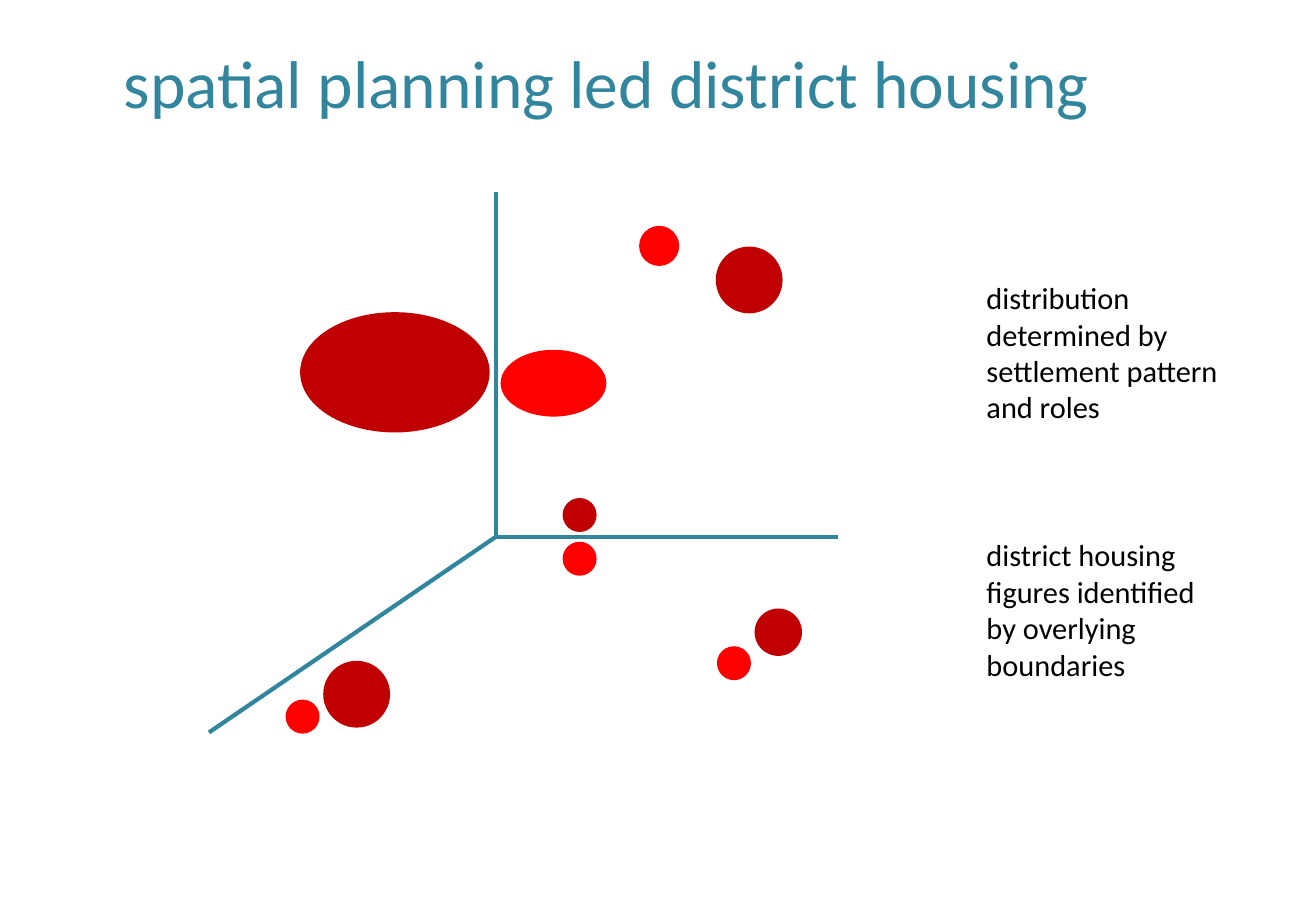
import pptx
import pptx.dml.color
import pptx.enum.shapes
import pptx.enum.text
import pptx.oxml.ns
import pptx.util
from lxml import etree

PX = 9144
FONT = "Calibri"
COLORS = {"teal": "31859C", "dark_red": "C00000", "red": "FF0000", "text": "000000"}
DARK_SETTLEMENTS = [
    (75, 99, 156, 99), (417, 45, 55, 55), (291, 252, 28, 28),
    (449, 343, 39, 39), (94, 386, 55, 55),
]
RED_SETTLEMENTS = [
    (240, 130, 87, 55), (354, 28, 33, 33), (291, 288, 28, 28),
    (418, 374, 28, 28), (63, 418, 28, 28),
]
BOUNDARY_ENDS = [(236, 0), (518, 284), (0, 445)]
BOUNDARY_MEETING = (236, 284)
NOTES = [
    "distribution determined by settlement pattern and roles",
    "district housing figures identified by overlying boundaries",
]


def px(length):
    """Turn px into EMU."""
    return pptx.util.Emu(length * PX)


def rgb(name):
    """Return a named colour."""
    return pptx.dml.color.RGBColor.from_string(COLORS[name])


def add_text(slide, box, lines, size, color, anchor, gap=0):
    """Write paragraphs in a box with a gap in points between them."""
    frame = slide.shapes.add_textbox(*map(px, box)).text_frame
    frame.word_wrap = True
    frame.vertical_anchor = anchor
    frame.text = "\n".join(lines)
    for index, paragraph in enumerate(frame.paragraphs):
        paragraph.space_before = pptx.util.Pt(gap if index else 0)
        for run in paragraph.runs:
            run.font.name = FONT
            run.font.size = pptx.util.Pt(size)
            run.font.color.rgb = rgb(color)


def add_settlements(slide, box, ellipses, color):
    """Draw one group of settlements on the map."""
    left, top = box[:2]
    settlements = slide.shapes.add_group_shape()
    for x, y, width, height in ellipses:
        settlement = settlements.shapes.add_shape(
            pptx.enum.shapes.MSO_SHAPE.OVAL,
            px(left + x), px(top + y), px(width), px(height))
        settlement.shadow.inherit = False
        settlement.fill.solid()
        settlement.fill.fore_color.rgb = rgb(color)
        settlement.line.fill.background()


def add_boundaries(slide, box):
    """Draw the district boundaries out from their meeting point."""
    left, top = box[:2]
    meeting_x, meeting_y = BOUNDARY_MEETING
    boundaries = slide.shapes.add_group_shape()
    for x, y in BOUNDARY_ENDS:
        boundary = boundaries.shapes.add_connector(
            pptx.enum.shapes.MSO_CONNECTOR.STRAIGHT,
            px(left + meeting_x), px(top + meeting_y), px(left + x), px(top + y))
        boundary.line.color.rgb = rgb("teal")
        boundary.line.width = pptx.util.Pt(2.5)
        etree.SubElement(boundary.element.spPr, pptx.oxml.ns.qn("a:effectLst"))


def add_map(slide, box):
    """Draw settlements overlaid by district boundaries."""
    add_settlements(slide, box, DARK_SETTLEMENTS, "dark_red")
    add_settlements(slide, box, RED_SETTLEMENTS, "red")
    add_boundaries(slide, box)


def main():
    """Build and save the slide."""
    deck = pptx.Presentation()
    deck.slide_width, deck.slide_height = px(1083), px(750)
    slide = deck.slides.add_slide(deck.slide_layouts[6])
    anchors = pptx.enum.text.MSO_ANCHOR
    add_text(slide, (92, 5, 900, 125), ["spatial planning led district housing"],
             40, "teal", anchors.MIDDLE)
    add_map(slide, (172, 158, 518, 445))
    add_text(slide, (802, 225, 220, 404), NOTES, 18, "text", anchors.TOP, gap=66)
    deck.save("out.pptx")


if __name__ == "__main__":
    main()
